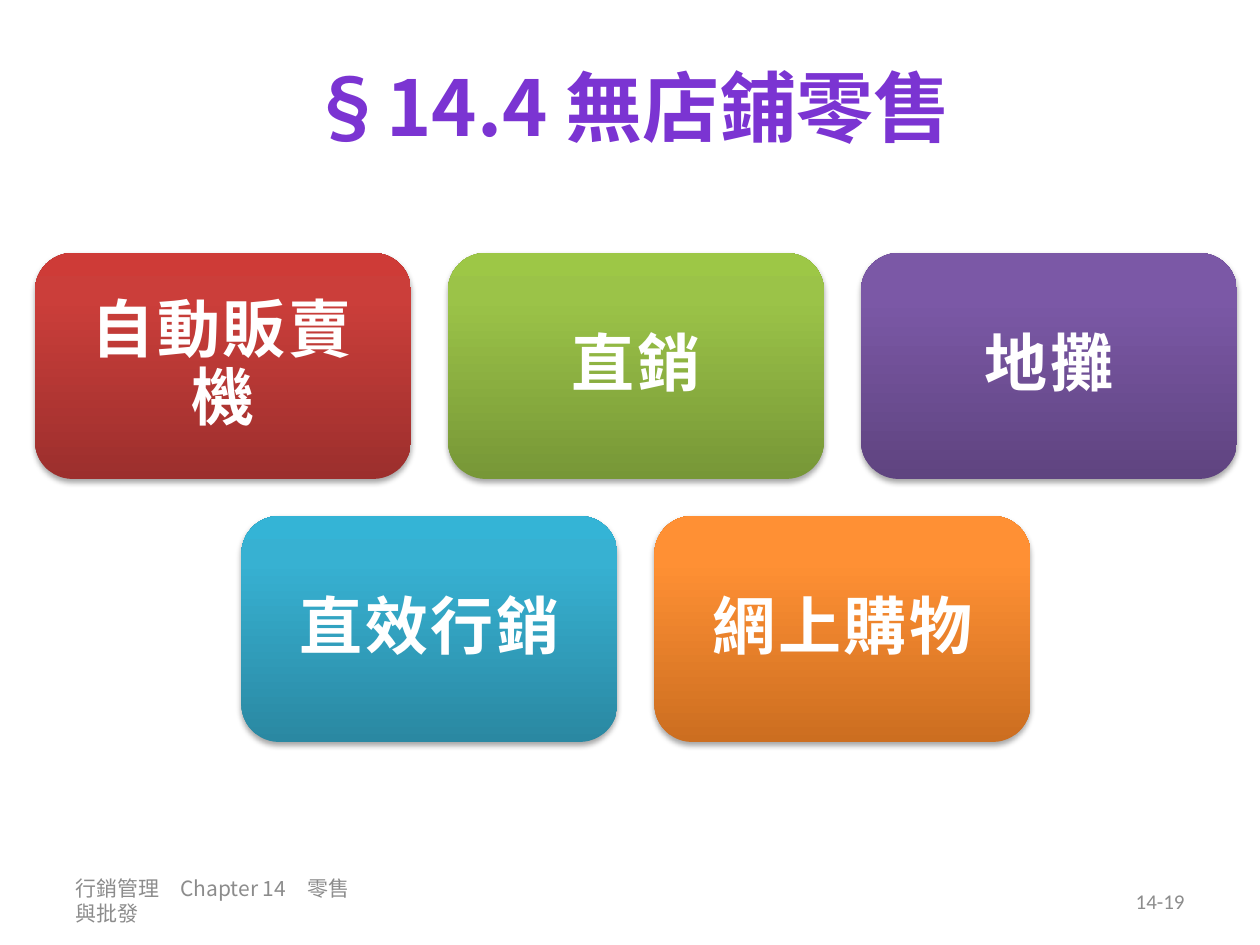
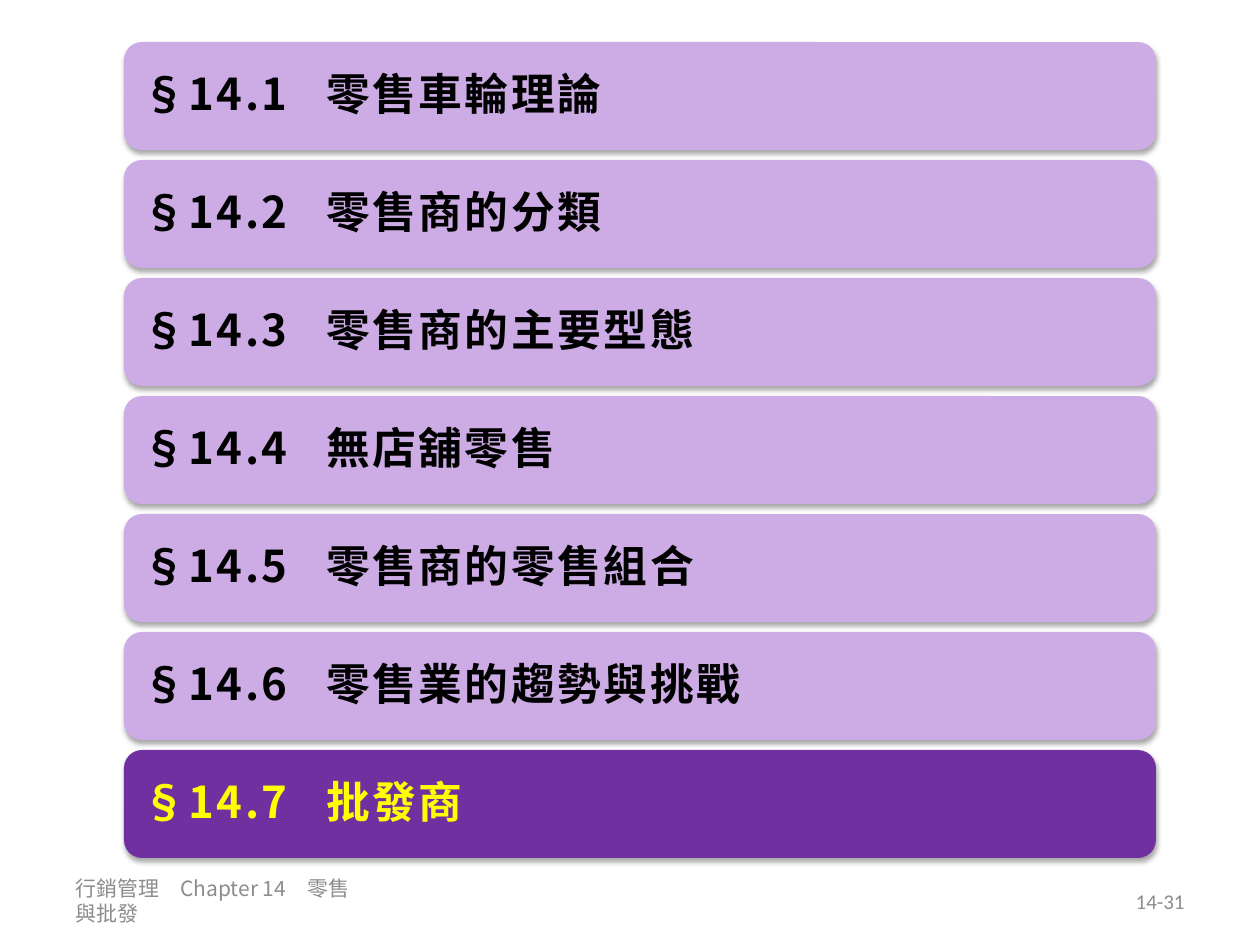
from copy import deepcopy

from lxml import etree
from pptx import Presentation
from pptx import util as u
from pptx.dml.color import RGBColor
from pptx.enum import shapes, text
from pptx.oxml.ns import qn

# Content
FOOTER = "行銷管理　Chapter 14　零售與批發"
TITLE = "§14.4\u2002無店鋪零售".replace("\u2002", " ")
CARD_ROWS = [
    [("自動販賣機", "red"), ("直銷", "green"), ("地攤", "purple")],
    [("直效行銷", "blue"), ("網上購物", "orange")],
]
SECTIONS = ["零售車輪理論", "零售商的分類", "零售商的主要型態", "無店舖零售",
            "零售商的零售組合", "零售業的趨勢與挑戰", "批發商"]
CURRENT_SECTION = 7

# Shared style
COLORS = {
    "title": "7B34D2", "footer": "8C8C8C", "white": "FFFFFF", "black": "000000",
    "section": "CDACE6", "current": "7030A0", "current_text": "FFFF00",
}
GRADIENTS = {
    "red": ("9C2F2D", "CB3E3A", "CE3B37"),
    "green": ("779737", "9BC348", "9DC746"),
    "purple": ("5F4480", "7B58A6", "7C57A8"),
    "blue": ("2A88A2", "37B1D2", "34B4D6"),
    "orange": ("CC6E20", "FF9034", "FF9136"),
}
GRADIENT_POSITIONS = (0, 0.8, 1)
CJK_FONT, LATIN_FONT = "Noto Sans CJK SC", "Calibri"
LEFT, CENTER, RIGHT = text.PP_ALIGN.LEFT, text.PP_ALIGN.CENTER, text.PP_ALIGN.RIGHT

# Layout in px
SLIDE_WIDTH, SLIDE_HEIGHT = 1260, 945
TITLE_BOX = (63, 16, 1134, 179)
FOOTER_BOX = (63, 876, 309, 50)
NUMBER_BOX = (903, 876, 294, 50)
CARD_WIDTH, CARD_HEIGHT, CARD_GAP = 376, 226, 37
CARDS_CENTER, CARDS_TOP, CARD_INSET = 636, 253, 19
BAR_LEFT, BAR_TOP, BAR_WIDTH, BAR_HEIGHT, BAR_GAP = 124, 42, 1032, 108, 10
BAR_INSET, BAR_TAB = 13, 184


def px(length):
    return u.Emu(round(length * 914400 / 126))


def box(*lengths):
    return [px(length) for length in lengths]


def write(shape, content, size, color, align=LEFT, font_name=CJK_FONT,
          bold=False, spacing=None, inset=None, tab=None):
    frame = shape.text_frame
    frame.word_wrap = True
    frame.vertical_anchor = text.MSO_ANCHOR.MIDDLE
    if inset is not None:
        frame.margin_left = frame.margin_right = px(inset)
        frame.margin_top = frame.margin_bottom = px(inset)
    paragraph = frame.paragraphs[0]
    paragraph.text = content
    paragraph.alignment = align
    properties = paragraph._p.get_or_add_pPr()
    if tab:
        tabs = etree.SubElement(properties, qn("a:tabLst"))
        etree.SubElement(tabs, qn("a:tab"), pos=str(px(tab)), algn="l")
    font = paragraph.font
    font.name, font.size, font.bold = font_name, u.Pt(size), bold
    font.color.rgb = RGBColor.from_string(COLORS[color])
    defaults = properties.find(qn("a:defRPr"))
    etree.SubElement(defaults, qn("a:ea"), typeface=font_name)
    if spacing:
        defaults.set("spc", str(spacing))
        paragraph.line_spacing = 0.9


def add_panel(slide, bounds):
    """Add a rounded rectangle with a soft shadow below it."""
    panel = slide.shapes.add_shape(shapes.MSO_SHAPE.ROUNDED_RECTANGLE, *box(*bounds))
    panel.line.fill.background()
    panel.shadow.inherit = False
    effects = panel._element.spPr.find(qn("a:effectLst"))
    shadow = etree.SubElement(effects, qn("a:outerShdw"), blurRad="40000",
                              dist="23000", dir="5400000", rotWithShape="0")
    color = etree.SubElement(shadow, qn("a:srgbClr"), val=COLORS["black"])
    etree.SubElement(color, qn("a:alpha"), val="35000")
    return panel


def fill_gradient(shape, colors):
    shape.fill.gradient()
    shape.fill.gradient_angle = 90
    stop_list = shape._element.spPr.find(qn("a:gradFill")).find(qn("a:gsLst"))
    stop_list.append(deepcopy(stop_list[-1]))
    for stop, position, color in zip(shape.fill.gradient_stops, GRADIENT_POSITIONS, colors):
        stop.position = position
        stop.color.rgb = RGBColor.from_string(color)


def add_footer(slide, number):
    footer = slide.shapes.add_textbox(*box(*FOOTER_BOX))
    write(footer, FOOTER, 12, "footer")
    page = slide.shapes.add_textbox(*box(*NUMBER_BOX))
    write(page, number, 12, "footer", RIGHT, LATIN_FONT)


def add_cards_slide(presentation):
    slide = presentation.slides.add_slide(presentation.slide_layouts[5])
    title = slide.shapes.title
    title.left, title.top, title.width, title.height = box(*TITLE_BOX)
    write(title, TITLE, 44, "title", CENTER, bold=True)
    add_footer(slide, "14-19")

    # Centred rows of cards
    for row, cards in enumerate(CARD_ROWS):
        row_width = len(cards) * (CARD_WIDTH + CARD_GAP) - CARD_GAP
        top = CARDS_TOP + row * (CARD_HEIGHT + CARD_GAP)
        for column, (label, gradient) in enumerate(cards):
            left = CARDS_CENTER - row_width / 2 + column * (CARD_WIDTH + CARD_GAP)
            card = add_panel(slide, (left, top, CARD_WIDTH, CARD_HEIGHT))
            fill_gradient(card, GRADIENTS[gradient])
            write(card, label, 36, "white", CENTER, bold=True, spacing=150,
                  inset=CARD_INSET)


def add_sections_slide(presentation):
    slide = presentation.slides.add_slide(presentation.slide_layouts[6])
    add_footer(slide, "14-31")

    # Section bars, with the current one highlighted
    for number, name in enumerate(SECTIONS, start=1):
        current = number == CURRENT_SECTION
        top = BAR_TOP + (number - 1) * (BAR_HEIGHT + BAR_GAP)
        bar = add_panel(slide, (BAR_LEFT, top, BAR_WIDTH, BAR_HEIGHT))
        bar.fill.solid()
        fill = COLORS["current" if current else "section"]
        bar.fill.fore_color.rgb = RGBColor.from_string(fill)
        write(bar, f"§14.{number}\t{name}", 25, "current_text" if current else "black",
              bold=True, spacing=150, inset=BAR_INSET, tab=BAR_TAB)


def main():
    presentation = Presentation()
    presentation.slide_width, presentation.slide_height = box(SLIDE_WIDTH, SLIDE_HEIGHT)
    add_cards_slide(presentation)
    add_sections_slide(presentation)
    presentation.save("out.pptx")


if __name__ == "__main__":
    main()
